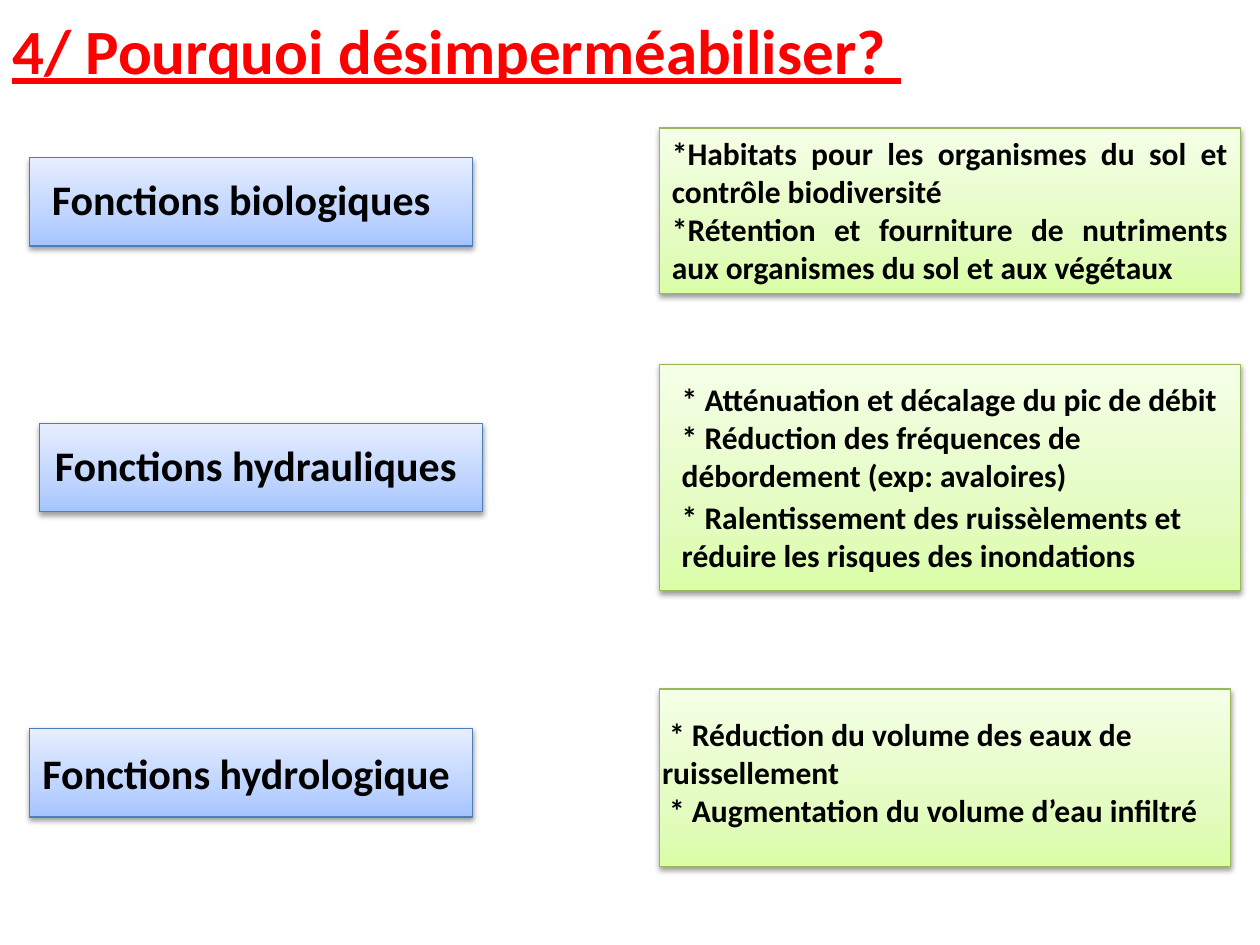
from copy import deepcopy
from dataclasses import dataclass

from lxml import etree
from pptx import Presentation
from pptx.dml.color import RGBColor
from pptx.enum.shapes import MSO_SHAPE
from pptx.enum.text import MSO_ANCHOR, PP_ALIGN
from pptx.oxml.ns import qn
from pptx.util import Inches, Pt

RECT = MSO_SHAPE.RECTANGLE
TOP, MIDDLE = MSO_ANCHOR.TOP, MSO_ANCHOR.MIDDLE
LEFT, CENTER, JUSTIFY = PP_ALIGN.LEFT, PP_ALIGN.CENTER, PP_ALIGN.JUSTIFY

COLS = 128  # square grid cells across the slide width


@dataclass(frozen=True)
class PanelStyle:
    line: str
    stops: tuple[str, str, str]  # from bottom to top


@dataclass(frozen=True)
class Theme:
    font: str = "Calibri"
    title_color: str = "FF0000"
    text_color: str = "000000"
    title_size: int = 36
    label_size: int = 24
    body_size: int = 18
    blue: PanelStyle = PanelStyle("4B7EBC", ("A4C4FF", "BFD4FF", "E6EEFF"))
    green: PanelStyle = PanelStyle("98B955", ("DAFDA7", "E4FCC2", "F5FFE7"))


@dataclass(frozen=True)
class Box:
    """A rectangle in grid cells."""
    col: float
    row: float
    cols: float
    rows: float


@dataclass(frozen=True)
class Text:
    box: Box
    lines: tuple[str, ...]
    size: int
    align: PP_ALIGN = LEFT
    anchor: MSO_ANCHOR = TOP


@dataclass(frozen=True)
class SoilFunction:
    label_panel: Box
    label: Text
    effect_panel: Box
    effects: tuple[Text, ...]


THEME = Theme()
LABEL, BODY = THEME.label_size, THEME.body_size
LABEL_COLS, LABEL_ROWS = 45, 9
EFFECT_COL = 67

bio_effects = Box(EFFECT_COL, 13, 59, 16.8)
hydrology_label = Box(3, 74, LABEL_COLS, LABEL_ROWS)

FUNCTIONS = (
    SoilFunction(
        Box(3, 16, LABEL_COLS, LABEL_ROWS),
        Text(Box(4, 17, 48, 6.4), ("Fonctions biologiques",), LABEL),
        bio_effects,
        (Text(bio_effects, (
            "*Habitats pour les organismes du sol et contrôle biodiversité ",
            "*Rétention et fourniture de nutriments aux organismes du sol et aux végétaux",
        ), BODY, JUSTIFY),),
    ),
    SoilFunction(
        Box(4, 43, LABEL_COLS, LABEL_ROWS),
        Text(Box(3, 44, 46, 6.4), ("Fonctions hydrauliques",), LABEL, CENTER),
        Box(EFFECT_COL, 37, 59, 23),
        (Text(Box(68, 38, 60, 13), (
            "* Atténuation et décalage du pic de débit",
            "* Réduction des fréquences de débordement (exp: avaloires)",
        ), BODY),
         Text(Box(68, 50, 60, 9), (
             "* Ralentissement des ruissèlements et réduire les risques des inondations",
         ), BODY)),
    ),
    SoilFunction(
        hydrology_label,
        Text(hydrology_label, ("Fonctions hydrologique ",), LABEL, CENTER, MIDDLE),
        Box(EFFECT_COL, 70, 58, 18),
        (Text(Box(66, 72, 59, 13), (
            " * Réduction du volume des eaux de ruissellement",
            " * Augmentation du volume d’eau infiltré",
        ), BODY),),
    ),
)


def place(box: Box, cell: float) -> list[int]:
    return [round(n * cell) for n in (box.col, box.row, box.cols, box.rows)]


def write(tf, text: Text, *, color: str = THEME.text_color, underline: bool = False) -> None:
    tf.word_wrap = True
    tf.vertical_anchor = text.anchor
    for i, line in enumerate(text.lines):
        p = tf.add_paragraph() if i else tf.paragraphs[0]
        p.alignment = text.align
        r = p.add_run()
        r.text = line
        r.font.name = THEME.font
        r.font.size = Pt(text.size)
        r.font.bold = True
        r.font.underline = underline
        r.font.color.rgb = RGBColor.from_string(color)


def add_shadow(s) -> None:
    s.shadow.inherit = False
    effects = s._element.spPr.find(qn("a:effectLst"))
    shadow = etree.SubElement(effects, qn("a:outerShdw"), blurRad="40000",
                              dist="20000", dir="5400000", rotWithShape="0")
    black = etree.SubElement(shadow, qn("a:srgbClr"), val="000000")
    etree.SubElement(black, qn("a:alpha"), val="38000")


def add_panel(shapes, box: Box, style: PanelStyle, cell: float):
    s = shapes.add_shape(RECT, *place(box, cell))
    s.fill.gradient()
    s.fill.gradient_angle = 90
    stop_list = s._element.spPr.find(qn("a:gradFill")).find(qn("a:gsLst"))
    stop_list.insert(1, deepcopy(stop_list[0]))
    for stop, position, color in zip(s.fill.gradient_stops, (0, 0.35, 1), style.stops):
        stop.position = position
        stop.color.rgb = RGBColor.from_string(color)
    s.line.color.rgb = RGBColor.from_string(style.line)
    s.line.width = Pt(0.75)
    add_shadow(s)
    return s


def add_text(shapes, text: Text, cell: float, **fmt) -> None:
    write(shapes.add_textbox(*place(text.box, cell)).text_frame, text, **fmt)


def add_labelled_panel(shapes, box: Box, texts: tuple[Text, ...],
                       style: PanelStyle, cell: float) -> None:
    """Draw a panel; text sharing its box goes inside, other text lies over it."""
    panel = add_panel(shapes, box, style, cell)
    for text in texts:
        if text.box == box:
            write(panel.text_frame, text)
        else:
            add_text(shapes, text, cell)


def main() -> None:
    prs = Presentation()
    prs.slide_width, prs.slide_height = Inches(10), Inches(7.5)
    shapes = prs.slides.add_slide(prs.slide_layouts[6]).shapes
    cell = prs.slide_width / COLS

    title = Text(Box(0, 0, 108.8, 10), ("4/ Pourquoi désimperméabiliser? ",),
                 THEME.title_size, anchor=MIDDLE)
    add_text(shapes, title, cell, color=THEME.title_color, underline=True)
    for f in FUNCTIONS:
        add_labelled_panel(shapes, f.label_panel, (f.label,), THEME.blue, cell)
        add_labelled_panel(shapes, f.effect_panel, f.effects, THEME.green, cell)
    prs.save("out.pptx")


if __name__ == "__main__":
    main()
